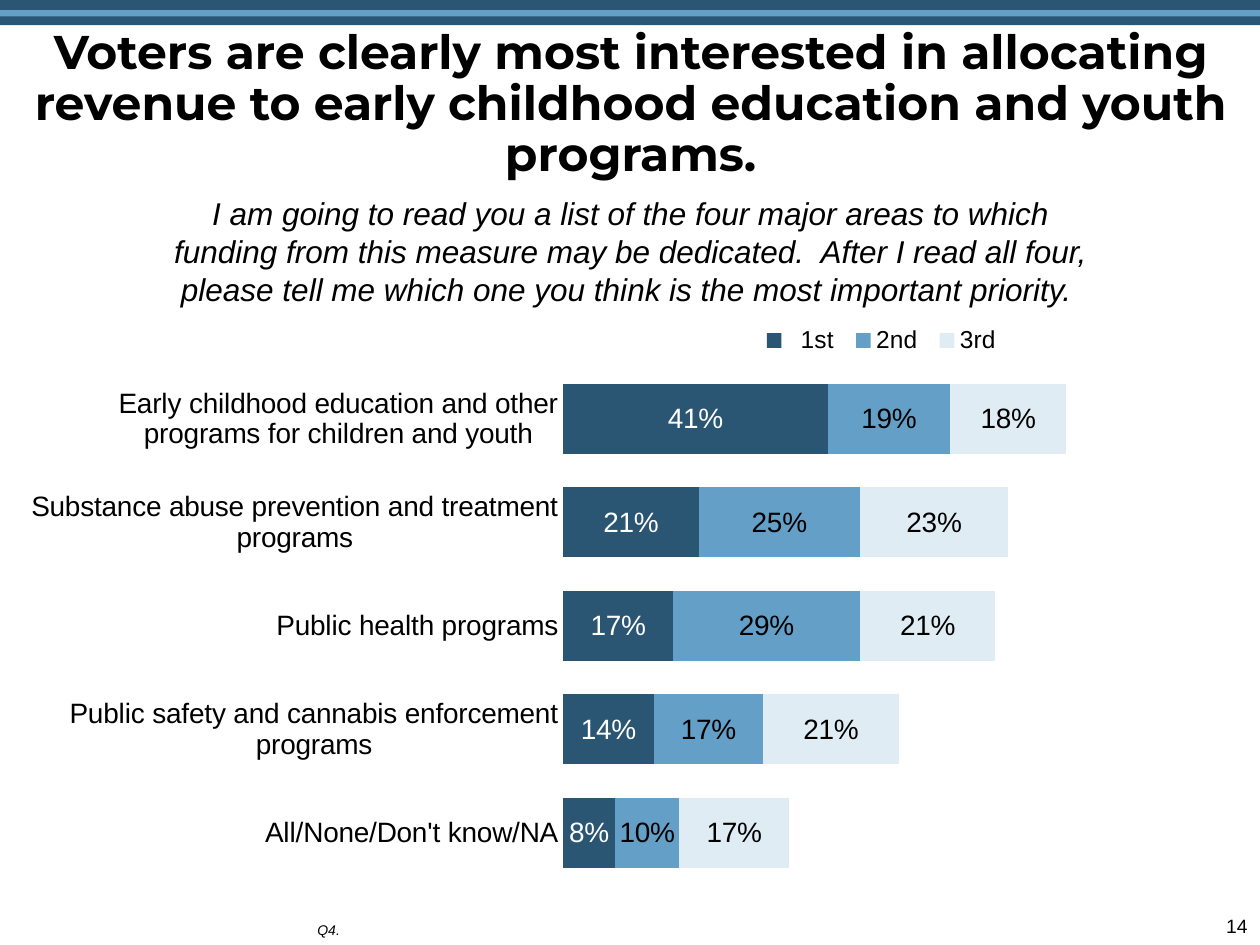
from lxml import etree
from pptx import Presentation
from pptx import util as u
from pptx.chart.data import CategoryChartData
from pptx.dml.color import RGBColor
from pptx.enum import chart as ch, shapes, text
from pptx.oxml.ns import qn

NAVY, BLUE, PALE = "2A5673", "639FC6", "E0ECF4"
BLACK, WHITE = "000000", "FFFFFF"
CATEGORIES = [
    "Early childhood education and other programs for children and youth",
    "Substance abuse prevention and treatment programs",
    "Public health programs",
    "Public safety and cannabis enforcement programs",
    "All/None/Don't know/NA",
]
PRIORITIES = [
    ("  1st", (0.41, 0.21, 0.17, 0.14, 0.08), NAVY, WHITE),
    ("2nd", (0.19, 0.25, 0.29, 0.17, 0.10), BLUE, BLACK),
    ("3rd", (0.18, 0.23, 0.21, 0.21, 0.17), PALE, BLACK),
]


def rgb(color):
    return RGBColor.from_string(color)


def set_font(font, size, color=BLACK, name="Arial"):
    font.size = u.Pt(size)
    font.name = name
    font.color.rgb = rgb(color)


def add_band(s, top, height, color):
    sp = s.shapes.add_shape(shapes.MSO_SHAPE.RECTANGLE, 0, u.Inches(top),
                            u.Inches(10), u.Inches(height))
    sp.shadow.inherit = False
    sp.fill.solid()
    sp.fill.fore_color.rgb = rgb(color)
    sp.line.fill.background()


def add_text(s, box, words, size, align=text.PP_ALIGN.LEFT,
             anchor=text.MSO_ANCHOR.TOP, name="Arial", bold=False,
             italic=False, spacing=1.0):
    sp = s.shapes.add_textbox(*[u.Inches(v) for v in box])
    tf = sp.text_frame
    tf.word_wrap = True
    tf.vertical_anchor = anchor
    p = tf.paragraphs[0]
    p.alignment = align
    p.line_spacing = spacing
    r = p.add_run()
    r.text = words
    set_font(r.font, size, name=name)
    r.font.bold = bold
    r.font.italic = italic


def set_layout(parent, index, box, inner=False):
    for old in parent.findall(qn("c:layout")):
        parent.remove(old)
    layout = etree.Element(qn("c:layout"))
    manual = etree.SubElement(layout, qn("c:manualLayout"))
    settings = [("layoutTarget", "inner")] if inner else []
    settings += [("xMode", "edge"), ("yMode", "edge")]
    settings += zip("xywh", box)
    for tag, value in settings:
        etree.SubElement(manual, qn("c:" + tag)).set("val", str(value))
    parent.insert(index, layout)


def style_axes(chart):
    cat = chart.category_axis
    cat.reverse_order = True
    cat.major_tick_mark = ch.XL_TICK_MARK.NONE
    cat.format.line.fill.background()
    set_font(cat.tick_labels.font, 16)
    val = chart.value_axis
    val.minimum_scale, val.maximum_scale, val.major_unit = 0, 1, 0.2
    val.has_major_gridlines = False
    val.visible = False


def style_series(series, color, label_color):
    series.format.fill.solid()
    series.format.fill.fore_color.rgb = rgb(color)
    labels = series.data_labels
    labels.show_value = True
    labels.number_format = "0%"
    labels.number_format_is_linked = False
    labels.position = ch.XL_LABEL_POSITION.CENTER
    set_font(labels.font, 16, label_color)


def add_priority_chart(s, box):
    data = CategoryChartData(number_format="0%")
    data.categories = CATEGORIES
    for name, values, _, _ in PRIORITIES:
        data.add_series(name, values)
    chart = s.shapes.add_chart(ch.XL_CHART_TYPE.BAR_STACKED,
                               *[u.Inches(v) for v in box], data).chart
    set_font(chart.font, 18)
    chart.has_title = False
    style_axes(chart)
    plot = chart.plots[0]
    plot.gap_width, plot.overlap = 48, 100
    plot.vary_by_categories = False
    for series, (_, _, color, label_color) in zip(plot.series, PRIORITIES):
        style_series(series, color, label_color)
    chart.has_legend = True
    chart.legend.position = ch.XL_LEGEND_POSITION.TOP
    chart.legend.include_in_layout = False
    set_font(chart.legend.font, 14)
    root = chart.element
    set_layout(root.find(".//" + qn("c:plotArea")), 0,
               (0.445, 0.086, 0.527, 0.901), inner=True)
    set_layout(root.find(".//" + qn("c:legend")), 1, (0.6, 0.01, 0.21, 0.06))


def main():
    prs = Presentation()
    prs.slide_width, prs.slide_height = u.Inches(10), u.Inches(7.5)
    s = prs.slides.add_slide(prs.slide_layouts[6])
    center = text.PP_ALIGN.CENTER
    add_text(s, (8.52, 7.21, 1.48, 0.29), "14", 11, text.PP_ALIGN.RIGHT)
    add_band(s, 0, 0.2, NAVY)
    add_band(s, 0.08, 0.05, BLUE)
    add_priority_chart(s, (0.15, 2.52, 9.71, 4.56))
    add_text(s, (0.15, 0.21, 9.71, 1.25),
             "Voters are clearly most interested in allocating revenue to "
             "early childhood education and youth programs.", 27, center,
             text.MSO_ANCHOR.MIDDLE, "Montserrat", bold=True, spacing=0.9)
    add_text(s, (2.42, 7.06, 7.29, 0.44), "Q4.", 8,
             anchor=text.MSO_ANCHOR.BOTTOM, italic=True, spacing=0.9)
    add_text(s, (1.15, 1.49, 7.71, 1.01),
             "I am going to read you a list of the four major areas to which "
             "funding from this measure may be dedicated.  After I read all "
             "four, please tell me which one you think is the most important "
             "priority. ", 18, center, italic=True)
    prs.save("out.pptx")


if __name__ == "__main__":
    main()
